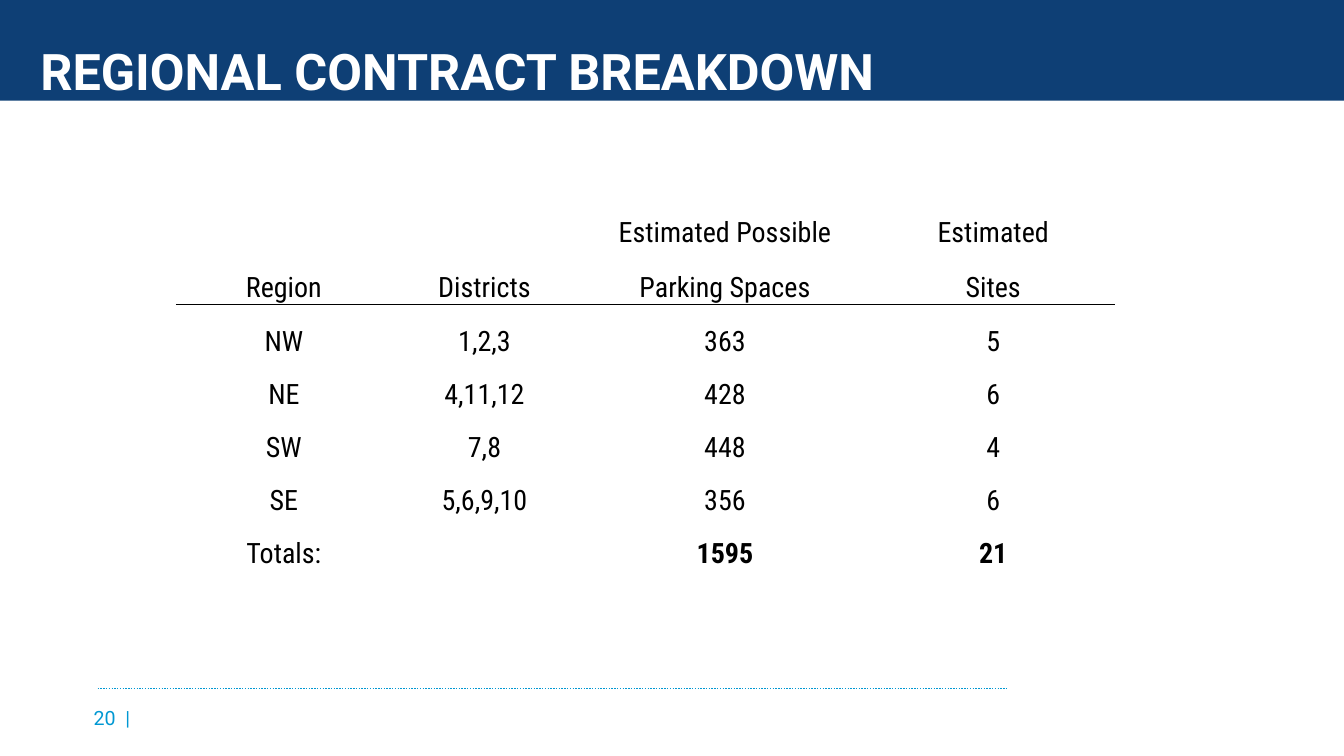
from lxml import etree
from pptx import Presentation
from pptx.dml.color import RGBColor
from pptx.enum.dml import MSO_LINE
from pptx.enum.shapes import MSO_CONNECTOR, MSO_SHAPE
from pptx.enum.text import MSO_ANCHOR, PP_ALIGN
from pptx.oxml import parse_xml
from pptx.oxml.ns import nsdecls, qn
from pptx.util import Cm, Pt

RECT, STRAIGHT = MSO_SHAPE.RECTANGLE, MSO_CONNECTOR.STRAIGHT
LEFT, CENTER = PP_ALIGN.LEFT, PP_ALIGN.CENTER
MIDDLE, BOTTOM = MSO_ANCHOR.MIDDLE, MSO_ANCHOR.BOTTOM
DOTTED = MSO_LINE.ROUND_DOT

TITLE = "REGIONAL CONTRACT BREAKDOWN"
PAGE = "20  |"
ROWS = [
    ("", "", "Estimated Possible", "Estimated"),
    ("Region", "Districts", "Parking Spaces", "Sites"),
    ("NW", "1,2,3", "363", "5"),
    ("NE", "4,11,12", "428", "6"),
    ("SW", "7,8", "448", "4"),
    ("SE", "5,6,9,10", "356", "6"),
    ("Totals:", "", "1595", "21"),
]
COL_WIDTHS = [5.41, 4.7, 7.42, 6.1]
ROW_HEIGHTS = [2.44, 1.4] + [1.34] * 5
RULES = {1: "lnB", 2: "lnT"}
NAVY, BLUE, WHITE, BLACK = "0E3F75", "0098D3", "FFFFFF", "000000"

TITLE_FONT = {"name": "Roboto", "size": Pt(36), "bold": True}
PAGE_FONT = {"name": "Roboto", "size": Pt(14)}
CELL_FONT = {"name": "Roboto Condensed", "size": Pt(20)}
TITLE_FRAME = {"margin_left": Cm(1.02), "margin_right": Cm(1.02), "margin_top": Cm(0.25),
               "margin_bottom": 0, "vertical_anchor": BOTTOM, "word_wrap": True}
PAGE_FRAME = {"margin_left": 0, "margin_right": 0, "margin_top": 0, "margin_bottom": 0,
              "vertical_anchor": MIDDLE, "word_wrap": False}
CELL_FRAME = {"margin_left": Cm(0.03), "margin_right": Cm(0.03), "margin_top": Cm(0.03),
              "margin_bottom": 0, "vertical_anchor": BOTTOM}


def apply(obj, values):
    for name, value in values.items():
        setattr(obj, name, value)


def paint(color_format, color):
    color_format.rgb = RGBColor.from_string(color)


def write(tf, text, font, color, align):
    p = tf.paragraphs[0]
    p.alignment = align
    r = p.add_run()
    r.text = text
    apply(r.font, font)
    paint(r.font.color, color)


def add_rule(cell, side):
    cell._tc.get_or_add_tcPr().insert(0, parse_xml(
        f'<a:{side} {nsdecls("a")} w="12700"><a:solidFill><a:srgbClr val="{BLACK}"/>'
        f'</a:solidFill><a:prstDash val="solid"/></a:{side}>'))


def add_title(s):
    sp = s.shapes.add_shape(RECT, 0, 0, Cm(33.87), Cm(2.54))
    sp.shadow.inherit = False
    sp.fill.solid()
    paint(sp.fill.fore_color, NAVY)
    sp.line.fill.background()
    apply(sp.text_frame, TITLE_FRAME)
    write(sp.text_frame, TITLE, TITLE_FONT, WHITE, LEFT)


def add_footer(s):
    line = s.shapes.add_connector(STRAIGHT, Cm(2.46), Cm(17.35), Cm(25.4), Cm(17.35))
    paint(line.line.color, BLUE)
    apply(line.line, {"width": Pt(1), "dash_style": DOTTED})
    etree.SubElement(line._element.spPr, qn("a:effectLst"))
    sp = s.shapes.add_textbox(Cm(2.36), Cm(17.58), Cm(1.32), Cm(1.02))
    apply(sp.text_frame, PAGE_FRAME)
    write(sp.text_frame, PAGE, PAGE_FONT, BLUE, LEFT)


def add_regions(s):
    table = s.shapes.add_table(len(ROWS), len(COL_WIDTHS), Cm(4.45), Cm(3.84),
                               Cm(sum(COL_WIDTHS)), Cm(sum(ROW_HEIGHTS))).table
    apply(table, {"first_row": False, "horz_banding": False})
    for col, width in zip(table.columns, COL_WIDTHS):
        col.width = Cm(width)
    for i, (row, height, texts) in enumerate(zip(table.rows, ROW_HEIGHTS, ROWS)):
        row.height = Cm(height)
        for j, (cell, text) in enumerate(zip(row.cells, texts)):
            apply(cell, CELL_FRAME)
            cell.fill.background()
            if i in RULES:
                add_rule(cell, RULES[i])
            if text:
                bold = i == len(ROWS) - 1 and j > 0
                write(cell.text_frame, text, {**CELL_FONT, "bold": bold}, BLACK, CENTER)


def main():
    prs = Presentation()
    apply(prs, {"slide_width": Cm(33.87), "slide_height": Cm(19.05)})
    s = prs.slides.add_slide(prs.slide_layouts[6])
    add_footer(s)
    add_title(s)
    add_regions(s)
    prs.save("out.pptx")


if __name__ == "__main__":
    main()
